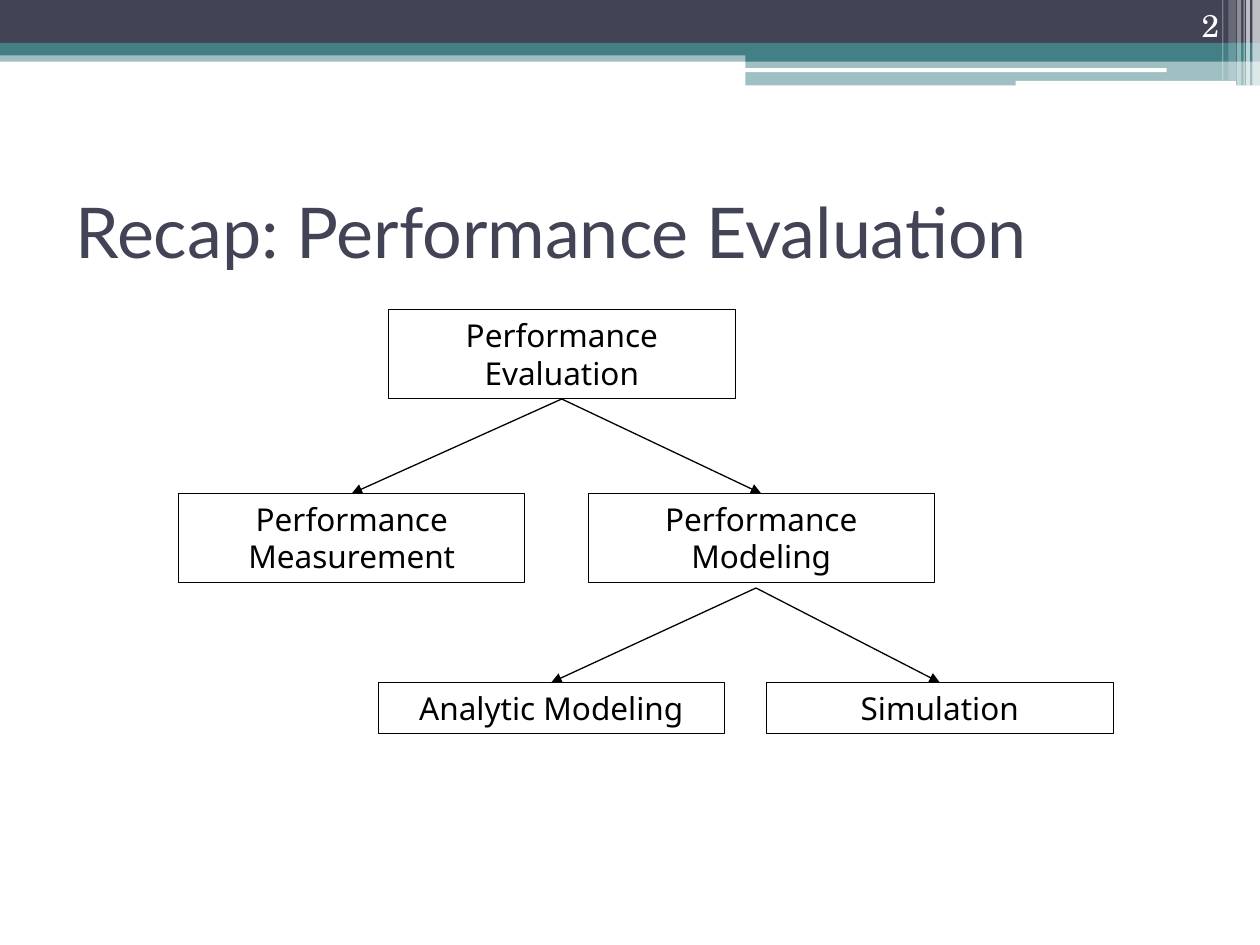
from lxml import etree
from pptx import Presentation
from pptx.dml.color import RGBColor
from pptx.enum import shapes, text
from pptx.oxml.ns import qn
from pptx.util import Pt

NAVY, TEAL, WHITE, BLACK = "424456", "438086", "FFFFFF", "000000"


def color(hex_string):
    return RGBColor.from_string(hex_string)


def add_run(paragraph, words, font, size, hex_string):
    run = paragraph.add_run()
    run.text = words
    run.font.name = font
    run.font.size = Pt(size)
    run.font.color.rgb = color(hex_string)


presentation = Presentation()
presentation.slide_width, presentation.slide_height = Pt(720), Pt(540)
slide = presentation.slides.add_slide(presentation.slide_layouts[5])

# Header bands and stripes: left, top, width, height, colour, opacity in percent
RECT = shapes.MSO_SHAPE.RECTANGLE
ROUND = shapes.MSO_SHAPE.ROUNDED_RECTANGLE
header = [
    (RECT, 0, 28.8, 720, 6.5, TEAL, 50),
    (RECT, 0, 0, 720, 24.5, NAVY, 100),
    (RECT, 0, 24.5, 720, 7.2, TEAL, 100),
    (RECT, 426, 28, 294, 7.2, TEAL, 100),
    (RECT, 426, 35.2, 294, 13.6, TEAL, 50),
    (ROUND, 425.5, 39, 241.2, 2.2, WHITE, 100),
    (ROUND, 580.3, 46.2, 126, 2.9, WHITE, 100),
    (RECT, 715.7, 0, 4.3, 49, WHITE, 65),
    (RECT, 712.1, 0, 2.2, 49, WHITE, 65),
    (RECT, 710.6, 0, 0.72, 49, WHITE, 60),
    (RECT, 707, 0, 2.2, 49, WHITE, 40),
    (RECT, 702, 0, 4.3, 46, WHITE, 20),
    (RECT, 698.4, 0, 0.72, 46, WHITE, 30),
]
for kind, left, top, width, height, fill, opacity in header:
    shape = slide.shapes.add_shape(kind, Pt(left), Pt(top), Pt(width), Pt(height))
    shape.shadow.inherit = False
    shape.line.fill.background()
    shape.fill.solid()
    shape.fill.fore_color.rgb = color(fill)
    if opacity < 100:
        rgb = shape.fill._xPr.find(".//" + qn("a:srgbClr"))
        etree.SubElement(rgb, qn("a:alpha")).set("val", str(opacity * 1000))

# Title
title = slide.shapes.title
title.left, title.top, title.width, title.height = Pt(36), Pt(90), Pt(648), Pt(84)
title.text_frame.vertical_anchor = text.MSO_ANCHOR.MIDDLE
paragraph = title.text_frame.paragraphs[0]
paragraph.alignment = text.PP_ALIGN.LEFT
add_run(paragraph, "Recap: Performance Evaluation", "Lato", 40, NAVY)

# Page number
number = slide.shapes.add_textbox(Pt(643.7), Pt(0), Pt(60), Pt(28.8))
number.text_frame.word_wrap = True
number.text_frame.vertical_anchor = text.MSO_ANCHOR.BOTTOM
paragraph = number.text_frame.paragraphs[0]
paragraph.alignment = text.PP_ALIGN.RIGHT
add_run(paragraph, "2", "TeX Gyre Schola", 18, WHITE)

# Tree boxes
tree = [
    ("Performance Evaluation", 222, 177, 51),
    ("Performance Measurement", 102, 282, 51),
    ("Performance Modeling", 336, 282, 51),
    ("Analytic Modeling", 216, 390, 29),
    ("Simulation", 438, 390, 29),
]
boxes = {}
for label, left, top, height in tree:
    shape = slide.shapes.add_shape(RECT, Pt(left), Pt(top), Pt(198), Pt(height))
    shape.shadow.inherit = False
    shape.fill.background()
    shape.line.color.rgb = color(BLACK)
    shape.line.width = Pt(0.5)
    shape.text_frame.word_wrap = True
    shape.text_frame.vertical_anchor = text.MSO_ANCHOR.TOP
    paragraph = shape.text_frame.paragraphs[0]
    paragraph.alignment = text.PP_ALIGN.CENTER
    add_run(paragraph, label, "Noto Sans", 18, BLACK)
    boxes[label] = shape

# Arrows from parent to child; the lower pair starts just below its parent
branches = [
    ("Performance Evaluation", "Performance Measurement"),
    ("Performance Evaluation", "Performance Modeling"),
    (None, "Analytic Modeling"),
    (None, "Simulation"),
]
for parent, child in branches:
    arrow = slide.shapes.add_connector(
        shapes.MSO_CONNECTOR.STRAIGHT, Pt(432), Pt(336), Pt(432), Pt(390))
    if parent:
        arrow.begin_connect(boxes[parent], 2)
    arrow.end_connect(boxes[child], 0)
    arrow.line.color.rgb = color(BLACK)
    arrow.line.width = Pt(0.75)
    etree.SubElement(arrow.line._get_or_add_ln(), qn("a:tailEnd")).set("type", "triangle")
    etree.SubElement(arrow._element.spPr, qn("a:effectLst"))

presentation.save("out.pptx")
